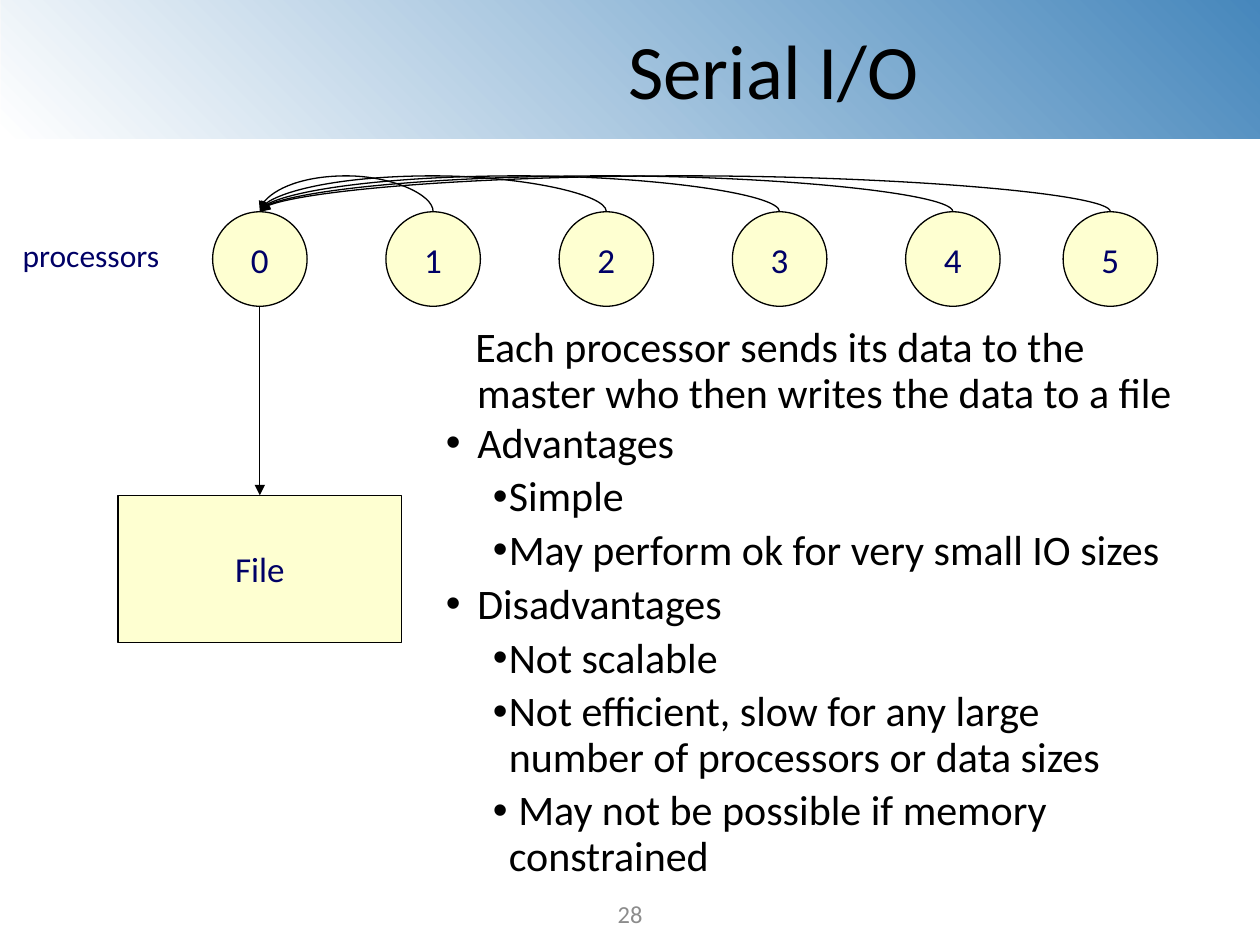
"""Build the Serial I/O slide: processors sending data through a master to one file."""
from lxml import etree
from pptx import Presentation
from pptx.dml.color import RGBColor
from pptx.enum.shapes import MSO_CONNECTOR, MSO_SHAPE
from pptx.enum.text import MSO_ANCHOR, MSO_AUTO_SIZE, PP_ALIGN
from pptx.oxml import parse_xml
from pptx.oxml.ns import qn
from pptx.util import Pt

CENTER, LEFT = PP_ALIGN.CENTER, PP_ALIGN.LEFT
MIDDLE, TOP = MSO_ANCHOR.MIDDLE, MSO_ANCHOR.TOP
NO_FIT = MSO_AUTO_SIZE.NONE
RECTANGLE, OVAL = MSO_SHAPE.RECTANGLE, MSO_SHAPE.OVAL
STRAIGHT, CURVE = MSO_CONNECTOR.STRAIGHT, MSO_CONNECTOR.CURVE

BLACK = RGBColor(0x00, 0x00, 0x00)
WHITE = RGBColor(0xFF, 0xFF, 0xFF)
BLUE = RGBColor(0x46, 0x87, 0xBC)
NAVY = RGBColor(0x00, 0x00, 0x66)
CREAM = RGBColor(0xFE, 0xFF, 0xD1)
GRAY = RGBColor(0x8C, 0x8C, 0x8C)

FONT = "Calibri"
CIRCLE_SIZE = 54
CIRCLE_TOP = 121
CIRCLE_LEFTS = [121.5 + 99 * i for i in range(5)] + [607.5]
MASTER_X = CIRCLE_LEFTS[0] + CIRCLE_SIZE / 2
CURVE_RISE = 18
CURVE_DEPTH = 0.1


def write(frame, text, size=24, color=BLACK, align=LEFT, anchor=TOP, wrap=True,
          level=0, indent=0, hanging=0, bullet=None, before=0, line=None, append=False):
    frame.auto_size = NO_FIT
    frame.word_wrap = wrap
    frame.vertical_anchor = anchor
    paragraph = frame.add_paragraph() if append else frame.paragraphs[0]
    paragraph.text = text
    paragraph.level = level
    paragraph.alignment = align
    paragraph.space_before = Pt(before)
    paragraph.line_spacing = line
    properties = paragraph._p.get_or_add_pPr()
    properties.set("marL", str(Pt(indent)))
    properties.set("indent", str(Pt(-hanging)))
    if bullet:
        etree.SubElement(properties, qn("a:buFont"), typeface="Arial")
        etree.SubElement(properties, qn("a:buChar"), char=bullet)
    else:
        etree.SubElement(properties, qn("a:buNone"))
    font = paragraph.runs[0].font
    font.name, font.size, font.color.rgb = FONT, Pt(size), color


def finish_arrow(arrow):
    arrow.line.color.rgb = BLACK
    arrow.line.width = Pt(0.75)
    etree.SubElement(arrow.line._get_or_add_ln(), qn("a:tailEnd"), type="triangle")
    etree.SubElement(arrow._element.spPr, qn("a:effectLst"))


presentation = Presentation()
presentation.slide_width, presentation.slide_height = Pt(720), Pt(540)
slide = presentation.slides.add_slide(presentation.slide_layouts[1])
shapes = slide.shapes
title, points = shapes.title, slide.placeholders[1]

banner = shapes.add_shape(RECTANGLE, Pt(0.5), Pt(0), Pt(720), Pt(79))
banner.shadow.inherit = False
banner.line.fill.background()
banner.fill.gradient()
for stop, color in zip(banner.fill.gradient_stops, (BLUE, WHITE)):
    stop.color.rgb = color
direction = banner._element.spPr.find(".//" + qn("a:lin"))
direction.getparent().replace(direction, parse_xml(
    '<a:path xmlns:a="http://schemas.openxmlformats.org/drawingml/2006/main" path="circle">'
    '<a:fillToRect l="100000" b="100000"/></a:path>'))
title.element.addprevious(banner.element)

title.left, title.top, title.width, title.height = Pt(180), Pt(9), Pt(534), Pt(60)
write(title.text_frame, "Serial I/O ", size=44, align=CENTER, anchor=MIDDLE)

nodes = [(OVAL, str(i), left, CIRCLE_TOP, CIRCLE_SIZE, CIRCLE_SIZE)
         for i, left in enumerate(CIRCLE_LEFTS)]
nodes.append((RECTANGLE, "File", 67.5, 283, 162, 84))
for outline, label, left, top, width, height in nodes:
    node = shapes.add_shape(outline, Pt(left), Pt(top), Pt(width), Pt(height))
    node.shadow.inherit = False
    node.fill.solid()
    node.fill.fore_color.rgb = CREAM
    node.line.color.rgb = BLACK
    node.line.width = Pt(0.75)
    write(node.text_frame, label, size=20, color=NAVY, align=CENTER, anchor=MIDDLE, wrap=False)
data_file = node

for left in CIRCLE_LEFTS[1:]:
    span = left - CIRCLE_LEFTS[0]
    middle = MASTER_X + span / 2
    message = shapes.add_connector(
        CURVE, Pt(middle + CURVE_DEPTH / 2), Pt(CIRCLE_TOP + span / 2),
        Pt(middle - CURVE_DEPTH / 2), Pt(CIRCLE_TOP - span / 2))
    properties = message._element.spPr
    properties.find(qn("a:xfrm")).set("rot", str(270 * 60000))
    bend = round(-CURVE_RISE / CURVE_DEPTH * 100000)
    etree.SubElement(properties.find(".//" + qn("a:avLst")), qn("a:gd"),
                     name="adj1", fmla=f"val {bend}")
    finish_arrow(message)

file_write = shapes.add_connector(
    STRAIGHT, Pt(MASTER_X), Pt(CIRCLE_TOP + CIRCLE_SIZE), Pt(MASTER_X), data_file.top)
file_write.end_connect(data_file, 0)
finish_arrow(file_write)

processors = shapes.add_textbox(Pt(5), Pt(131), Pt(94), Pt(29))
write(processors.text_frame, "processors", size=18, color=NAVY, align=CENTER,
      anchor=MIDDLE, wrap=False)

summary = shapes.add_textbox(Pt(256.5), Pt(183), Pt(430), Pt(84))
write(summary.text_frame,
      "Each processor sends its data to the master who then writes the data to a file",
      level=1, indent=9, hanging=1, line=0.9)

points.left, points.top, points.width, points.height = Pt(238.5), Pt(237.5), Pt(445), Pt(288)
arguments = [
    (1, "Advantages"),
    (2, "Simple"),
    (2, "May perform ok for very small IO sizes"),
    (1, "Disadvantages"),
    (2, "Not scalable"),
    (2, "Not efficient, slow for any large number of processors or data sizes"),
    (2, " May not be possible if memory constrained"),
]
for i, (level, argument) in enumerate(arguments):
    write(points.text_frame, argument, level=level, indent=9 + 18 * level,
          hanging=27 - 9 * level, bullet="•", before=4.8 if i else 0, line=0.9, append=i > 0)

page_number = shapes.add_textbox(Pt(276), Pt(510), Pt(168), Pt(24))
write(page_number.text_frame, "28", size=14, color=GRAY, align=CENTER)

presentation.save("out.pptx")
